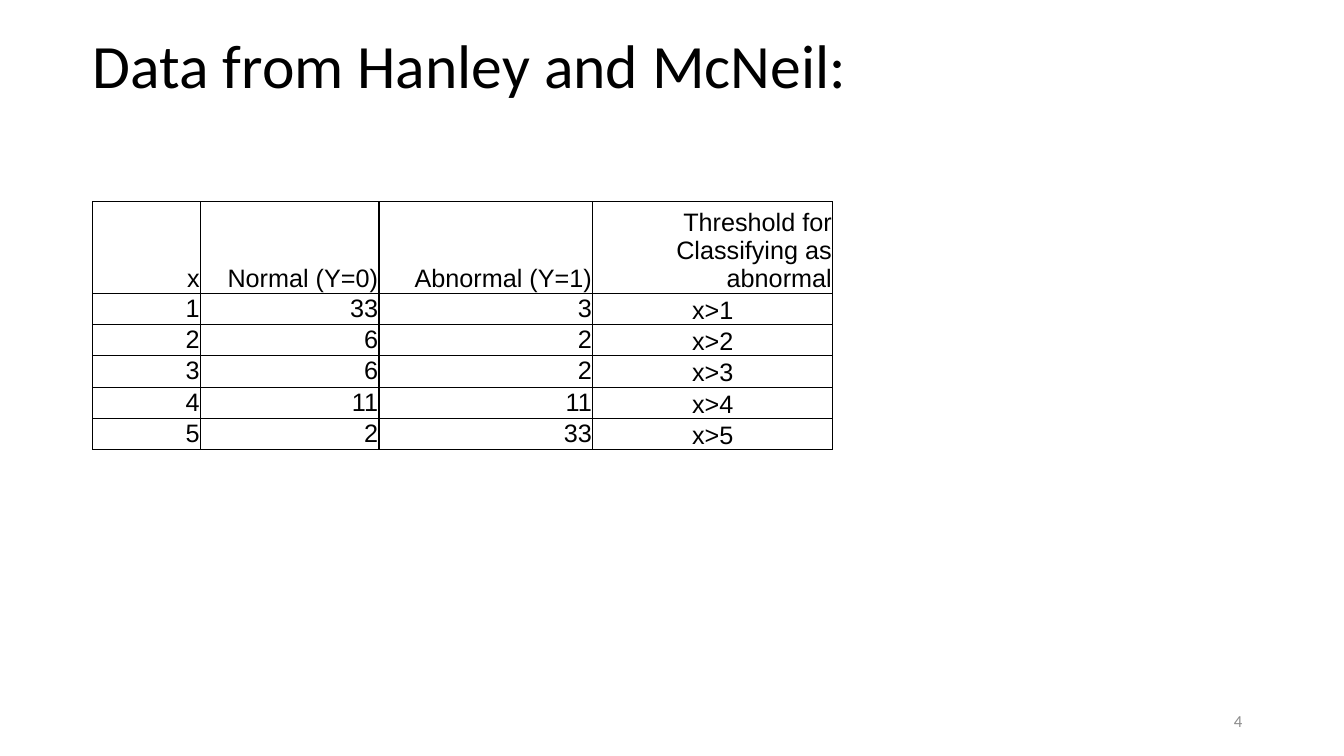
from lxml.etree import SubElement
from pptx import Presentation
from pptx.dml.color import RGBColor
from pptx.enum.text import MSO_ANCHOR, PP_ALIGN
from pptx.oxml.ns import qn
from pptx.util import Inches, Pt

# Content
TITLE = "Data from Hanley and McNeil:"
PAGE_NUMBER = "4"
HEADER = ("x", "Normal (Y=0)", "Abnormal (Y=1)", "Threshold for Classifying as abnormal")
COUNTS = [(33, 3), (6, 2), (6, 2), (11, 11), (2, 33)]  # normal, abnormal

# Layout and style
TABLE_LEFT, TABLE_TOP = 0.92, 2
COLUMN_WIDTHS = (1.07, 1.77, 2.12, 2.38)
HEADER_HEIGHT, ROW_HEIGHT = 0.85, 0.28
BLACK = RGBColor(0x00, 0x00, 0x00)
GRAY = RGBColor(0x8C, 0x8C, 0x8C)


def style_paragraph(p, font, size, color, align):
    p.alignment = align
    for r in p.runs:
        r.font.name = font
        r.font.size = Pt(size)
        r.font.color.rgb = color


def add_text(s, box, text, size, color, align, anchor):
    tf = s.shapes.add_textbox(*map(Inches, box)).text_frame
    tf.word_wrap = True
    tf.vertical_anchor = anchor
    tf.text = text
    p = tf.paragraphs[0]
    style_paragraph(p, "Calibri", size, color, align)
    return p


def add_borders(cell):
    tc_pr = cell._tc.get_or_add_tcPr()
    for i, side in enumerate(("a:lnL", "a:lnR", "a:lnT", "a:lnB")):
        ln = SubElement(tc_pr, qn(side), w=str(Pt(1)))
        fill = SubElement(ln, qn("a:solidFill"))
        SubElement(fill, qn("a:srgbClr"), val=str(BLACK))
        tc_pr.insert(i, ln)  # borders come before the fill


def add_data_table(s):
    rows = [HEADER] + [(x, *pair, f"x>{x}") for x, pair in enumerate(COUNTS, 1)]
    heights = [HEADER_HEIGHT] + [ROW_HEIGHT] * len(COUNTS)
    box = (TABLE_LEFT, TABLE_TOP, sum(COLUMN_WIDTHS), sum(heights))
    table = s.shapes.add_table(len(rows), len(HEADER), *map(Inches, box)).table
    table.first_row = table.horz_banding = False
    for column, width in zip(table.columns, COLUMN_WIDTHS):
        column.width = Inches(width)
    for i, (values, height) in enumerate(zip(rows, heights)):
        table.rows[i].height = Inches(height)
        for j, value in enumerate(values):
            cell = table.cell(i, j)
            is_threshold = j == len(HEADER) - 1
            cell.text = str(value)
            cell.margin_left = cell.margin_right = cell.margin_top = Inches(0.01)
            cell.margin_bottom = 0
            cell.vertical_anchor = MSO_ANCHOR.BOTTOM if i == 0 or is_threshold else MSO_ANCHOR.TOP
            cell.fill.background()
            add_borders(cell)
            align = PP_ALIGN.CENTER if i and is_threshold else PP_ALIGN.RIGHT
            style_paragraph(cell.text_frame.paragraphs[0], "Arial", 18, BLACK, align)


def main():
    prs = Presentation()
    prs.slide_width, prs.slide_height = Inches(13.33), Inches(7.5)
    s = prs.slides.add_slide(prs.slide_layouts[6])

    # Title, table, page number
    title = add_text(s, (0.82, 0.3, 11.5, 1.45), TITLE, 44, BLACK, PP_ALIGN.LEFT, MSO_ANCHOR.TOP)
    title.line_spacing = 0.9
    add_data_table(s)
    add_text(s, (9.42, 6.95, 3, 0.4), PAGE_NUMBER, 12, GRAY, PP_ALIGN.RIGHT, MSO_ANCHOR.MIDDLE)

    prs.save("out.pptx")


if __name__ == "__main__":
    main()
